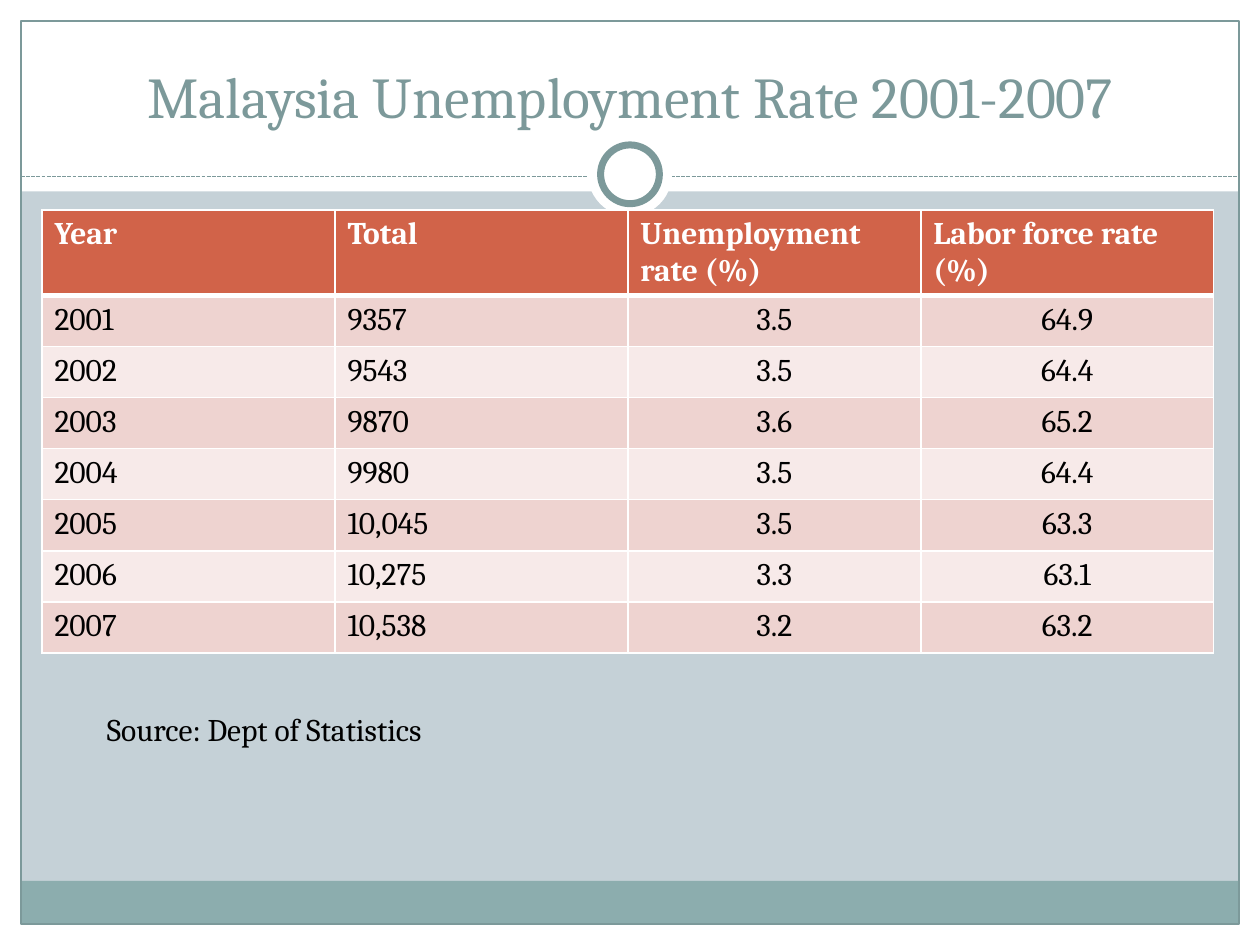
from dataclasses import dataclass
from typing import Optional

from lxml.etree import SubElement
from pptx import Presentation
from pptx.dml.color import RGBColor
from pptx.enum.dml import MSO_LINE
from pptx.enum.shapes import MSO_CONNECTOR, MSO_SHAPE
from pptx.enum.text import MSO_ANCHOR, PP_ALIGN
from pptx.oxml.ns import qn
from pptx.util import Inches, Length, Pt

COLORS = {
    "background": "C5D1D7",
    "white": "FFFFFF",
    "black": "000000",
    "teal": "7C999A",
    "footer": "8CADAE",
    "header": "D16349",
    "odd_row": "EED3D0",
    "even_row": "F7EAE9",
}
FONT = "Cambria"
COLUMNS, ROWS = 120, 90
MARGIN = 2
RULE_ROW = 16.8
TABLE_COLUMN, HEADER_ROW, BODY_ROW = 27.9, 8, 4.87

HEADINGS = ("Year", "Total", "Unemployment rate (%)", "Labor force rate (%)")
RATES = (
    ("2001", "9357", "3.5", "64.9"),
    ("2002", "9543", "3.5", "64.4"),
    ("2003", "9870", "3.6", "65.2"),
    ("2004", "9980", "3.5", "64.4"),
    ("2005", "10,045", "3.5", "63.3"),
    ("2006", "10,275", "3.3", "63.1"),
    ("2007", "10,538", "3.2", "63.2"),
)


@dataclass(frozen=True)
class Area:
    left: float
    top: float
    width: float
    height: float

    def lengths(self) -> tuple:
        return tuple(map(grid, (self.left, self.top, self.width, self.height)))


@dataclass(frozen=True)
class Panel:
    area: Area
    fill: Optional[str] = None
    line: Optional[str] = None
    line_width: float = 0.75
    kind: MSO_SHAPE = MSO_SHAPE.RECTANGLE


@dataclass(frozen=True)
class Label:
    area: Area
    text: str
    size: float
    color: str
    align: PP_ALIGN = PP_ALIGN.LEFT
    anchor: MSO_ANCHOR = MSO_ANCHOR.TOP


FRAME = Area(MARGIN, MARGIN, COLUMNS - 2 * MARGIN, ROWS - 2 * MARGIN)
BACKDROP = (
    Panel(Area(0, ROWS - MARGIN, COLUMNS, MARGIN), "white"),
    Panel(Area(0, 0, COLUMNS, 18.24), "white"),
    Panel(Area(0, 0, MARGIN, ROWS), "white"),
    Panel(Area(COLUMNS - MARGIN, 0, MARGIN, ROWS), "white"),
    Panel(Area(MARGIN, 83.9, FRAME.width, 4.1), "footer"),
    Panel(FRAME, line="teal"),
)
RING = (
    Panel(Area(56, 12.6, 8, 8), "white", kind=MSO_SHAPE.OVAL),
    Panel(Area(57.2, 13.8, 5.6, 5.6), "white", "teal", 4, MSO_SHAPE.OVAL),
)
LABELS = (
    Label(Area(4, 3, 112, 10), "Malaysia Unemployment Rate 2001-2007", 33,
          "teal", PP_ALIGN.CENTER, MSO_ANCHOR.BOTTOM),
    Label(Area(9, 67, 50, 4.8), "Source: Dept of Statistics", 18, "black"),
)


def grid(cells: float) -> Length:
    return Inches(cells * 10 / COLUMNS)


def color(name: str) -> RGBColor:
    return RGBColor.from_string(COLORS[name])


def paint(fill, name: str) -> None:
    fill.solid()
    fill.fore_color.rgb = color(name)


def write(frame, text: str, size: float, ink: str,
          align: PP_ALIGN = PP_ALIGN.LEFT, bold: bool = False) -> None:
    para = frame.paragraphs[0]
    para.text = text
    para.alignment = align
    para.font.name = FONT
    para.font.size = Pt(size)
    para.font.bold = bold
    para.font.color.rgb = color(ink)


def draw_panel(page, panel: Panel) -> None:
    shape = page.shapes.add_shape(panel.kind, *panel.area.lengths())
    shape.shadow.inherit = False
    if panel.fill:
        paint(shape.fill, panel.fill)
    else:
        shape.fill.background()
    if panel.line:
        shape.line.color.rgb = color(panel.line)
        shape.line.width = Pt(panel.line_width)
    else:
        shape.line.fill.background()


def draw_rule(page) -> None:
    rule = page.shapes.add_connector(
        MSO_CONNECTOR.STRAIGHT, grid(MARGIN), grid(RULE_ROW),
        grid(COLUMNS - MARGIN), grid(RULE_ROW))
    rule.line.color.rgb = color("teal")
    rule.line.width = Pt(0.75)
    rule.line.dash_style = MSO_LINE.SQUARE_DOT
    SubElement(rule.element.spPr, qn("a:effectLst"))


def draw_label(page, label: Label) -> None:
    box = page.shapes.add_textbox(*label.area.lengths())
    box.text_frame.word_wrap = True
    box.text_frame.vertical_anchor = label.anchor
    write(box.text_frame, label.text, label.size, label.color, label.align)


def border_cell(cell, bottom_width: float) -> None:
    properties = cell._tc.get_or_add_tcPr()
    widths = {"lnL": 1, "lnR": 1, "lnT": 1, "lnB": bottom_width}
    for position, (side, width) in enumerate(widths.items()):
        line = properties.makeelement(qn(f"a:{side}"), {"w": str(Pt(width))})
        solid = SubElement(line, qn("a:solidFill"))
        SubElement(solid, qn("a:srgbClr"), val=COLORS["white"])
        properties.insert(position, line)


def draw_table(page) -> None:
    area = Area(4, 20, TABLE_COLUMN * len(HEADINGS),
                HEADER_ROW + BODY_ROW * len(RATES))
    table = page.shapes.add_table(
        len(RATES) + 1, len(HEADINGS), *area.lengths()).table
    for column in table.columns:
        column.width = grid(TABLE_COLUMN)
    for row_index, values in enumerate((HEADINGS, *RATES)):
        heading = row_index == 0
        table.rows[row_index].height = grid(HEADER_ROW if heading else BODY_ROW)
        stripe = "odd_row" if row_index % 2 else "even_row"
        for column_index, value in enumerate(values):
            cell = table.cell(row_index, column_index)
            centered = not heading and column_index >= 2
            write(cell.text_frame, value, 18, "white" if heading else "black",
                  PP_ALIGN.CENTER if centered else PP_ALIGN.LEFT, heading)
            paint(cell.fill, "header" if heading else stripe)
            border_cell(cell, 3 if heading else 1)


def main() -> None:
    deck = Presentation()
    deck.slide_width, deck.slide_height = grid(COLUMNS), grid(ROWS)
    page = deck.slides.add_slide(deck.slide_layouts[6])
    paint(page.background.fill, "background")
    for panel in BACKDROP:
        draw_panel(page, panel)
    draw_rule(page)
    for panel in RING:
        draw_panel(page, panel)
    draw_table(page)
    for label in LABELS:
        draw_label(page, label)
    deck.save("out.pptx")


if __name__ == "__main__":
    main()
